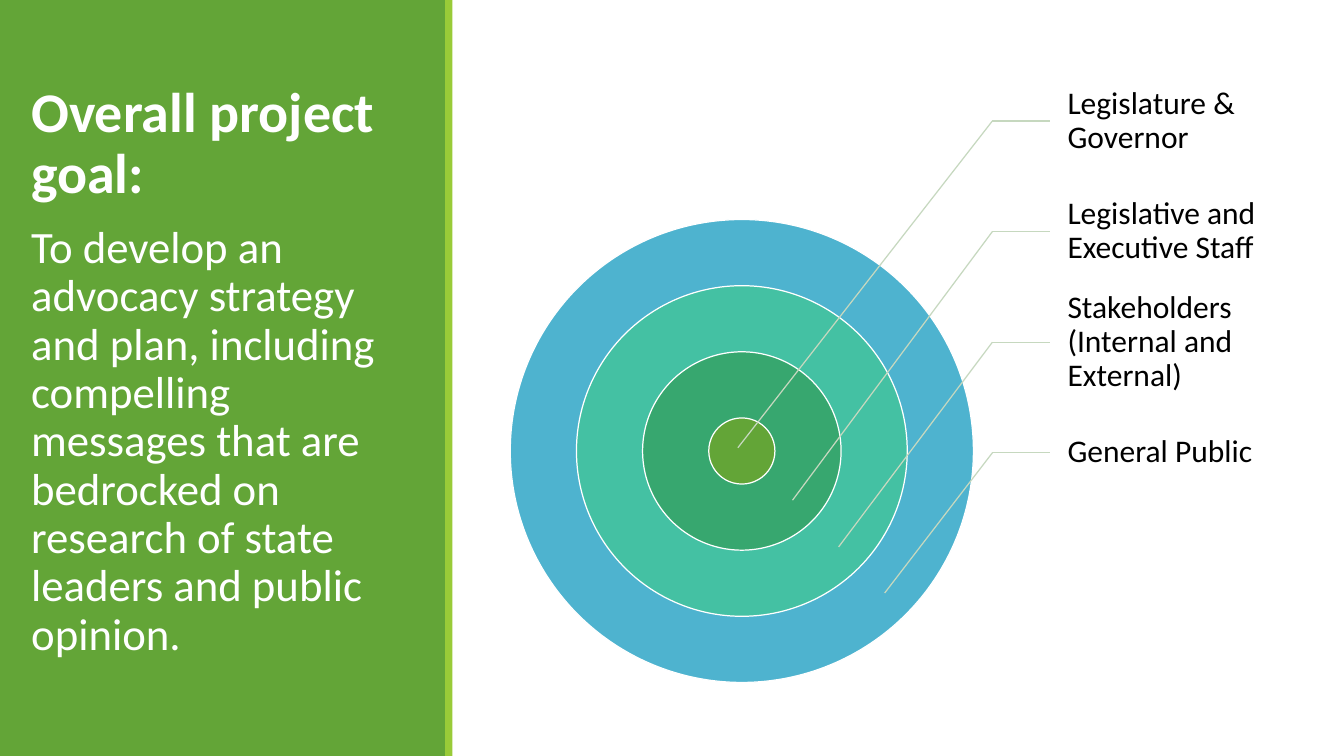
"""Build the project goal slide with its concentric audience rings."""
from pptx import Presentation
from pptx.dml.color import RGBColor
from pptx.enum.shapes import MSO_CONNECTOR, MSO_SHAPE
from pptx.enum.text import MSO_ANCHOR, MSO_AUTO_SIZE, PP_ALIGN
from pptx.oxml.ns import qn
from pptx.util import Pt

WHITE = RGBColor(0xFF, 0xFF, 0xFF)
BLACK = RGBColor(0, 0, 0)
GREEN = RGBColor(0x63, 0xA5, 0x37)
LIME = RGBColor(0x99, 0xCB, 0x38)
EMERALD = RGBColor(0x37, 0xA7, 0x6F)
TEAL = RGBColor(0x44, 0xC1, 0xA3)
BLUE = RGBColor(0x4E, 0xB3, 0xCF)
LEADER = RGBColor(0xC6, 0xD8, 0xBF)

FONT = "Calibri"
GOAL = [
    ("Overall project goal:", 56.9, True),
    ("To develop an advocacy strategy and plan, including compelling messages "
     "that are bedrocked on research of state leaders and public opinion.", 45.5, False),
]
AUDIENCES = [
    ("Legislature & Governor", GREEN, (749.5, 455)),
    ("Legislative and Executive Staff", EMERALD, (805, 508.3)),
    ("Stakeholders (Internal and External)", TEAL, (851.8, 555.8)),
    ("General Public", BLUE, (898.6, 602.6)),
]

WIDTH, HEIGHT = 1365.12, 768.24
CENTER_X, CENTER_Y = 753.5, 458.3
CORE, RING_STEP = 67.2, 134.4
LABEL_LEFT, LABEL_TOP, LABEL_WIDTH, LABEL_HEIGHT = 1066.3, 66.7, 234.7, 112.4
ELBOW_X = 1008


def add_filled(shapes, kind, box, color, outlined=False):
    shape = shapes.add_shape(kind, *map(Pt, box))
    shape.shadow.inherit = False
    shape.fill.solid()
    shape.fill.fore_color.rgb = color
    if outlined:
        shape.line.color.rgb = WHITE
        shape.line.width = Pt(1.25)
    else:
        shape.line.fill.background()


def add_leader(shapes, start, end):
    leader = shapes.add_connector(MSO_CONNECTOR.STRAIGHT, *map(Pt, start + end))
    leader.line.color.rgb = LEADER
    leader.line.width = Pt(1.25)
    properties = leader._element.spPr
    properties.append(properties.makeelement(qn("a:effectLst"), {}))
    return leader


def write_paragraph(paragraph, text, size, color, bold=False):
    paragraph.text = text
    paragraph.alignment = PP_ALIGN.LEFT
    paragraph.line_spacing = 0.9
    font = paragraph.runs[0].font
    font.name, font.size, font.bold = FONT, Pt(size), bold
    font.color.rgb = color


def add_goal(slide):
    goal = slide.placeholders[1]
    goal.left, goal.top, goal.width, goal.height = map(Pt, (24.5, 82, 399.6, 640))
    frame = goal.text_frame
    frame.word_wrap = True
    frame.auto_size = MSO_AUTO_SIZE.NONE
    frame.vertical_anchor = MSO_ANCHOR.TOP
    frame.text = "\n".join(text for text, _, _ in GOAL)
    for paragraph, (text, size, bold) in zip(frame.paragraphs, GOAL):
        write_paragraph(paragraph, text, size, WHITE, bold)
        paragraph.space_before, paragraph.space_after = Pt(17.1), Pt(2.8)


def add_label(shapes, text, top):
    label = shapes.add_textbox(*map(Pt, (LABEL_LEFT, top, LABEL_WIDTH, LABEL_HEIGHT)))
    frame = label.text_frame
    frame.word_wrap = True
    frame.vertical_anchor = MSO_ANCHOR.MIDDLE
    frame.margin_left = Pt(18)
    frame.margin_top = frame.margin_right = frame.margin_bottom = Pt(3)
    write_paragraph(frame.paragraphs[0], text, 32, BLACK)
    return label


def main():
    deck = Presentation()
    deck.slide_width, deck.slide_height = Pt(WIDTH), Pt(HEIGHT)
    slide = deck.slides.add_slide(deck.slide_layouts[2])
    shapes = slide.shapes
    heading = shapes.title._element
    heading.getparent().remove(heading)

    add_filled(shapes, MSO_SHAPE.RECTANGLE, (0, 0, 453.6, HEIGHT), GREEN)
    add_filled(shapes, MSO_SHAPE.RECTANGLE, (452.2, 0, 7.2, HEIGHT), LIME)
    add_goal(slide)
    goal = slide.placeholders[1]._element
    goal.getparent().append(goal)

    for rank, (_, color, _) in reversed(list(enumerate(AUDIENCES))):
        size = CORE + rank * RING_STEP
        ring = (CENTER_X - size / 2, CENTER_Y - size / 2, size, size)
        add_filled(shapes, MSO_SHAPE.OVAL, ring, color, outlined=True)

    for rank, (audience, _, tip) in enumerate(AUDIENCES):
        top = LABEL_TOP + rank * LABEL_HEIGHT
        elbow = (ELBOW_X, top + LABEL_HEIGHT / 2)
        label = add_label(shapes, audience, top)
        add_leader(shapes, elbow, (LABEL_LEFT, elbow[1])).end_connect(label, 1)
        add_leader(shapes, elbow, tip)

    deck.save("out.pptx")


if __name__ == "__main__":
    main()
